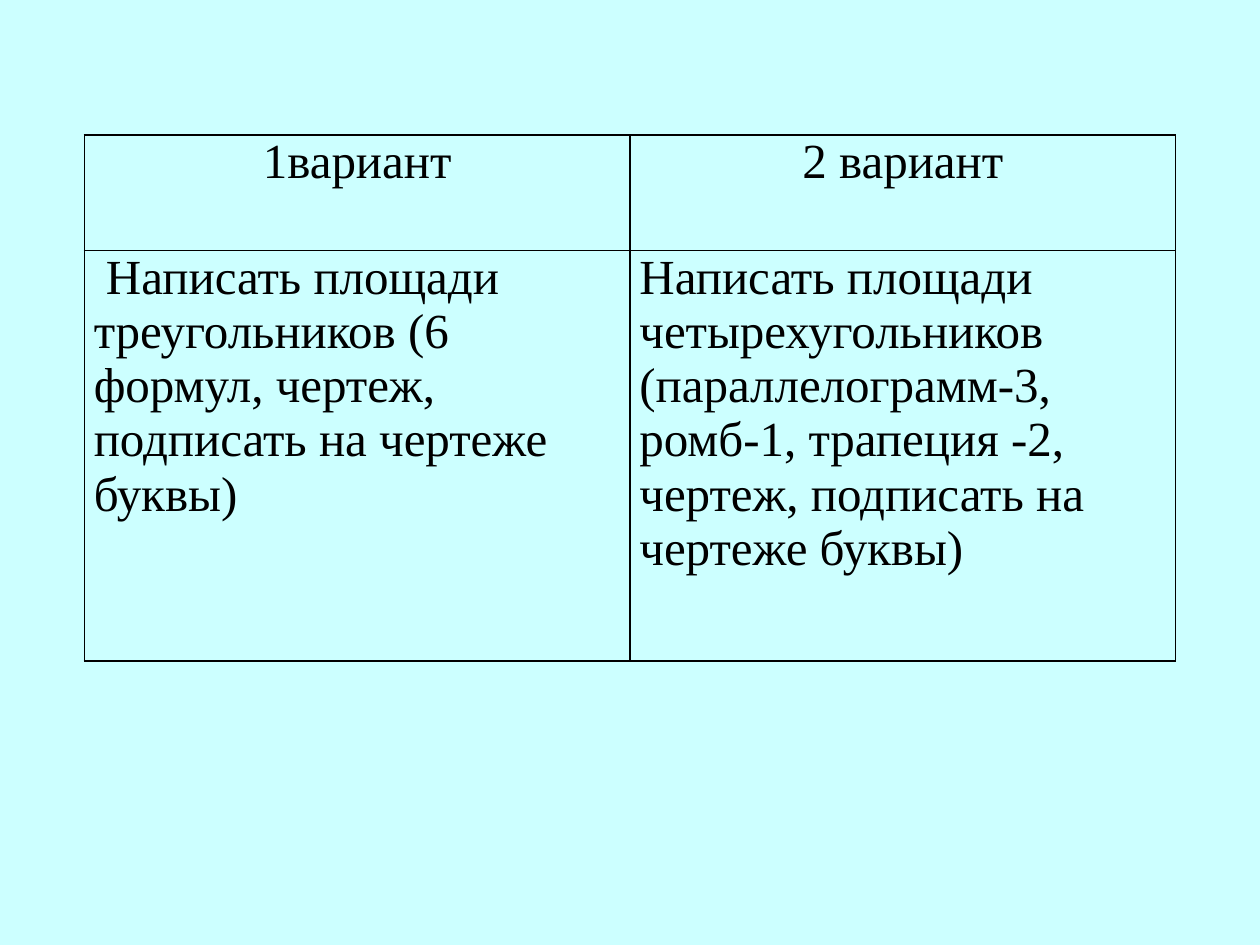
import pptx
import pptx.dml.color
import pptx.enum.text
import pptx.oxml
import pptx.oxml.ns
import pptx.util
from pptx.util import Cm

BACKGROUND = pptx.dml.color.RGBColor(0xCC, 0xFF, 0xFF)
BLACK = pptx.dml.color.RGBColor(0x00, 0x00, 0x00)
FONT_NAME = "Times New Roman"

HEADINGS = ["1вариант", "2 вариант"]
TASKS = [
    " Написать площади треугольников (6 формул, чертеж, подписать на чертеже буквы)",
    "Написать площади четырехугольников (параллелограмм-3, ромб-1, трапеция -2, "
    "чертеж, подписать на чертеже буквы)",
]


def write_text(text_frame, text, size=28, color=BLACK, alignment=None):
    paragraph = text_frame.paragraphs[0]
    paragraph.alignment = alignment
    run = paragraph.add_run()
    run.text = text
    run.font.name = FONT_NAME
    run.font.size = pptx.util.Pt(size)
    run.font.color.rgb = color


def set_borders(cell, color=BLACK, width=1):
    """Draw a solid line on all four sides; borders go before the fill."""
    properties = cell._tc.get_or_add_tcPr()
    for position, side in enumerate(("lnL", "lnR", "lnT", "lnB")):
        line = pptx.oxml.parse_xml(
            f'<a:{side} {pptx.oxml.ns.nsdecls("a")} w="{pptx.util.Pt(width)}">'
            f'<a:solidFill><a:srgbClr val="{color}"/></a:solidFill></a:{side}>'
        )
        properties.insert(position, line)


def add_variants_table(slide, left, top, width, row_heights):
    rows = [HEADINGS, TASKS]
    table = slide.shapes.add_table(
        len(rows), len(HEADINGS), left, top, width, sum(row_heights)
    ).table
    table.first_row = False
    table.horz_banding = False
    for column in table.columns:
        column.width = int(width / len(HEADINGS))

    for row_index, texts in enumerate(rows):
        table.rows[row_index].height = row_heights[row_index]
        # Only the headings are centred
        alignment = pptx.enum.text.PP_ALIGN.CENTER if row_index == 0 else None
        for column_index, text in enumerate(texts):
            cell = table.cell(row_index, column_index)
            cell.margin_left = cell.margin_right = Cm(0.19)
            cell.margin_top = cell.margin_bottom = 0
            cell.fill.background()
            set_borders(cell)
            write_text(cell.text_frame, text, alignment=alignment)


def main():
    presentation = pptx.Presentation()
    presentation.slide_width = Cm(25.4)
    presentation.slide_height = Cm(19.05)
    slide = presentation.slides.add_slide(presentation.slide_layouts[6])

    # Background
    slide.background.fill.solid()
    slide.background.fill.fore_color.rgb = BACKGROUND

    # Tasks for the two variants, centred across the slide
    margin = Cm(1.7)
    add_variants_table(
        slide,
        left=margin,
        top=Cm(2.72),
        width=presentation.slide_width - 2 * margin,
        row_heights=[Cm(2.33), Cm(8.27)],
    )
    presentation.save("out.pptx")


if __name__ == "__main__":
    main()
